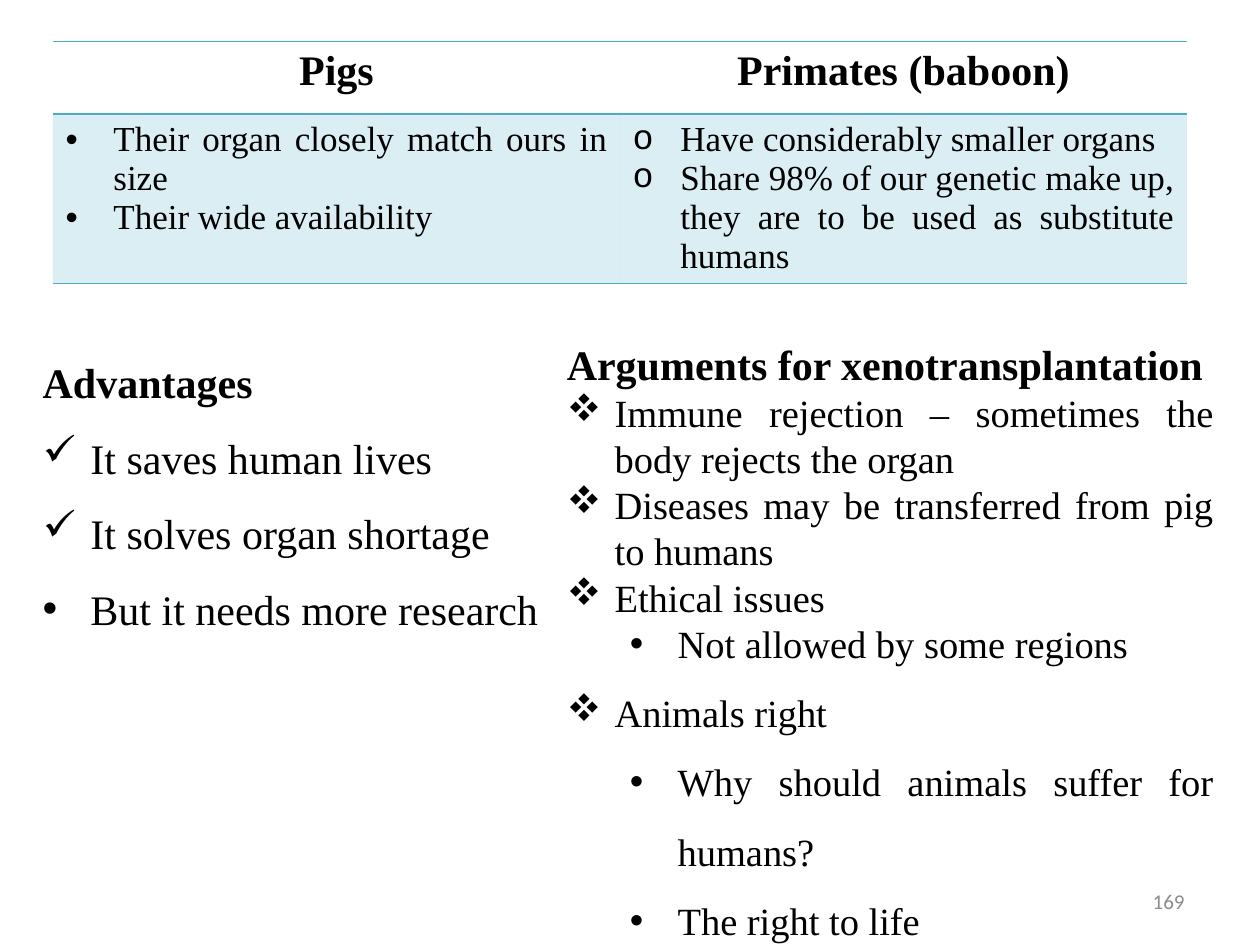
import pptx
import pptx.dml.color
import pptx.enum.text
import pptx.oxml
import pptx.oxml.ns
import pptx.util
from lxml import etree

RGBColor = pptx.dml.color.RGBColor
BLACK = RGBColor(0x00, 0x00, 0x00)
GREY = RGBColor(0x8C, 0x8C, 0x8C)
TEAL = RGBColor(0x4B, 0xAC, 0xC6)
ALIGN = pptx.enum.text.PP_ALIGN
SERIF = "Times New Roman"
NO_STYLE = "{2D5ABB26-0587-4C30-8999-92F81FD0307C}"
WIDTH, HEIGHT = pptx.util.Inches(10), pptx.util.Inches(7.5)
HANG = pptx.util.Inches(0.38)
LEVEL_STEP = pptx.util.Inches(0.5)
BULLET_FONTS = {"•": "Arial", "o": "Courier New", "✓": "Wingdings", "❖": "Wingdings"}
WINGDINGS = {"✓": "ü", "❖": "v"}

HEADING = {"size": 24, "bold": True}
CELL_HEADING = HEADING | {"align": ALIGN.CENTER}
BOX_HEADING = HEADING | {"spacing": 1.5}
CELL_ITEM = {"size": 20, "align": ALIGN.JUSTIFY}
ADVANTAGE = {"size": 24, "spacing": 1.5}
ARGUMENT = {"size": 22, "align": ALIGN.JUSTIFY}
WIDE_ARGUMENT = ARGUMENT | {"spacing": 1.5}

ANIMALS = [
    ("Pigs", "•", ["Their organ closely match ours in size", "Their wide availability"]),
    ("Primates (baboon)", "o", [
        "Have considerably smaller organs",
        "Share 98% of our genetic make up, they are to be used as substitute humans",
    ]),
]
ADVANTAGES = [
    ("Advantages", None, 0, BOX_HEADING),
    ("It saves human lives", "✓", 0, ADVANTAGE),
    ("It solves organ shortage", "✓", 0, ADVANTAGE),
    ("But it needs more research", "•", 0, ADVANTAGE),
]
ARGUMENTS = [
    ("Arguments for xenotransplantation", None, 0, BOX_HEADING),
    ("Immune rejection – sometimes the body rejects the organ", "❖", 0, ARGUMENT),
    ("Diseases may be transferred from pig to humans", "❖", 0, ARGUMENT),
    ("Ethical issues", "❖", 0, ARGUMENT),
    ("Not allowed by some regions", "•", 1, ARGUMENT),
    ("Animals right", "❖", 0, WIDE_ARGUMENT),
    ("Why should animals suffer for humans?", "•", 1, WIDE_ARGUMENT),
    ("The right to life", "•", 1, WIDE_ARGUMENT),
]


def share(left, top, width, height):
    return [int(v) for v in (left * WIDTH, top * HEIGHT, width * WIDTH, height * HEIGHT)]


def add_child(parent, tag, **attributes):
    return etree.SubElement(parent, pptx.oxml.ns.qn(tag), **attributes)


def add_bullet(p, mark, level):
    p.level = level
    pPr = p._p.get_or_add_pPr()
    pPr.set("marL", str(HANG + level * LEVEL_STEP))
    pPr.set("indent", str(-HANG))
    add_child(pPr, "a:buFont", typeface=BULLET_FONTS[mark])
    add_child(pPr, "a:buChar", char=WINGDINGS.get(mark, mark))


def write(tf, lines):
    for i, (text, mark, level, style) in enumerate(lines):
        p = tf.paragraphs[0] if i == 0 else tf.add_paragraph()
        if mark:
            add_bullet(p, mark, level)
        p.alignment = style.get("align", ALIGN.LEFT)
        p.line_spacing = style.get("spacing", 1.0)
        r = p.add_run()
        r.text = text
        font = {
            "name": style.get("name", SERIF),
            "size": pptx.util.Pt(style["size"]),
            "bold": style.get("bold", False),
        }
        for key, value in font.items():
            setattr(r.font, key, value)
        r.font.color.rgb = style.get("color", BLACK)


def text_box(s, box, lines, anchor=pptx.enum.text.MSO_ANCHOR.TOP):
    tf = s.shapes.add_textbox(*box).text_frame
    tf.word_wrap = True
    tf.vertical_anchor = anchor
    write(tf, lines)


def cell_border(cell, tag):
    ln = add_child(cell._tc.get_or_add_tcPr(), tag, w=str(pptx.util.Pt(1)))
    add_child(add_child(ln, "a:solidFill"), "a:srgbClr", val=str(TEAL))


def tint(cell):
    cell.fill.solid()
    cell.fill.fore_color.rgb = TEAL
    color = cell._tc.tcPr.find(".//" + pptx.oxml.ns.qn("a:solidFill") + "[last()]")[0]
    add_child(color, "a:alpha", val="20000")


def animal_table(s, box):
    table = s.shapes.add_table(2, len(ANIMALS), *box).table
    table._tbl.tblPr.find(pptx.oxml.ns.qn("a:tableStyleId")).text = NO_STYLE
    table.first_row = table.horz_banding = False
    table.rows[0].height = int(box[3] * 0.3)
    table.rows[1].height = box[3] - table.rows[0].height
    for col, (name, mark, facts) in enumerate(ANIMALS):
        head, body = table.cell(0, col), table.cell(1, col)
        write(head.text_frame, [(name, None, 0, CELL_HEADING)])
        write(body.text_frame, [(fact, mark, 0, CELL_ITEM) for fact in facts])
        tint(body)
        head.fill.background()
        fills = [(cell, cell._tc.tcPr[0]) for cell in (head, body)]
        cell_border(head, "a:lnT")
        for cell, fill in fills:
            cell_border(cell, "a:lnB")
            cell._tc.tcPr.append(fill)


def page_number(s, box):
    style = {"size": 12, "name": "Calibri", "color": GREY, "align": ALIGN.RIGHT}
    text_box(s, box, [("169", None, 0, style)], pptx.enum.text.MSO_ANCHOR.MIDDLE)


def main():
    prs = pptx.Presentation()
    prs.slide_width, prs.slide_height = WIDTH, HEIGHT
    s = prs.slides.add_slide(prs.slide_layouts[6])
    animal_table(s, share(0.042, 0.044, 0.9, 0.256))
    text_box(s, share(0.024, 0.344, 0.417, 0.327), ADVANTAGES)
    text_box(s, share(0.44, 0.325, 0.533, 0.69), ARGUMENTS)
    page_number(s, share(0.717, 0.927, 0.233, 0.053))
    prs.save("out.pptx")


if __name__ == "__main__":
    main()
